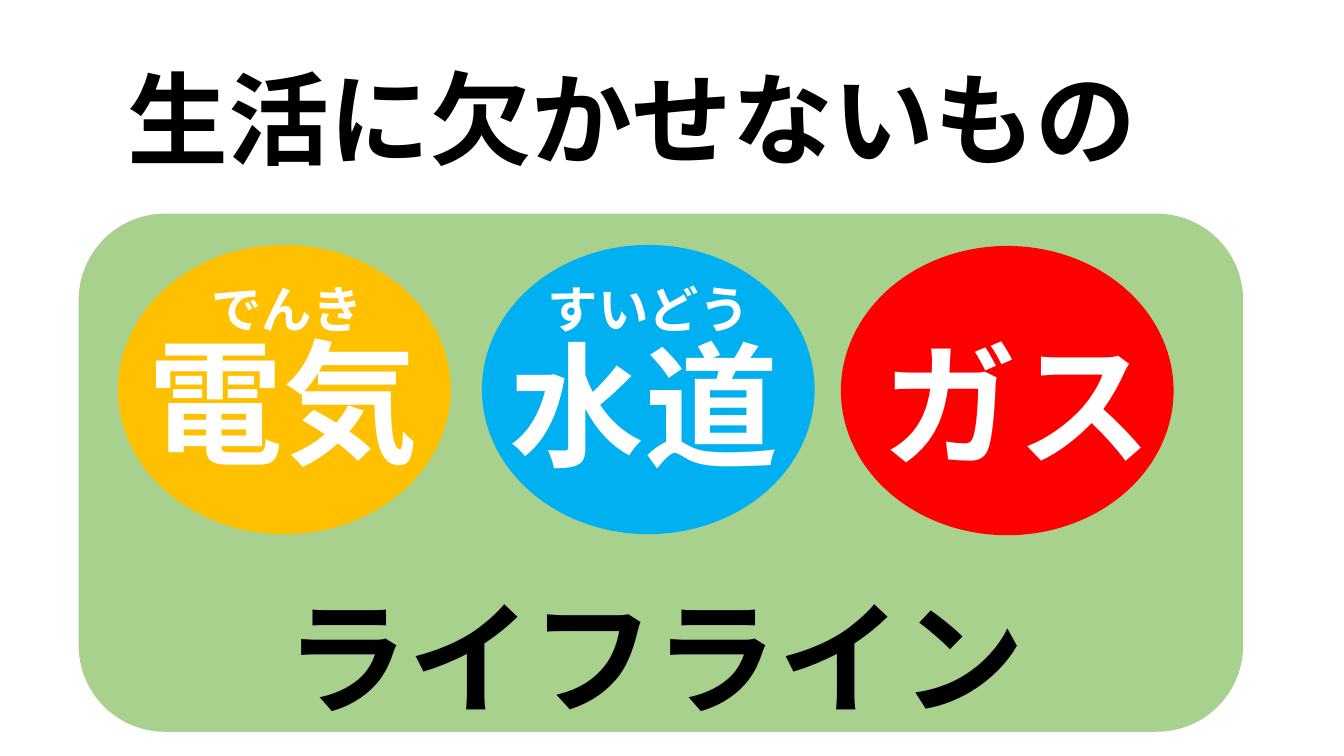
from lxml.etree import SubElement
from pptx import Presentation
from pptx.dml.color import RGBColor
from pptx.enum.shapes import MSO_SHAPE
from pptx.enum.text import MSO_ANCHOR, MSO_AUTO_SIZE, PP_ALIGN
from pptx.oxml.ns import qn
from pptx.util import Inches, Pt

FONT = "Noto Sans CJK JP"
BLACK = RGBColor(0x00, 0x00, 0x00)
WHITE = RGBColor(0xFF, 0xFF, 0xFF)
GREEN = RGBColor(0xA9, 0xD1, 0x8E)
YELLOW = RGBColor(0xFF, 0xC0, 0x00)
BLUE = RGBColor(0x00, 0xB0, 0xF0)
RED = RGBColor(0xFF, 0x00, 0x00)

UTILITIES = [
    ("電気", "でんき", YELLOW, (1.17, 2.43), (1.13, 3.3), 1.39),
    ("水道", "すいどう", BLUE, (4.78, 2.43), (4.71, 3.33), 4.98),
    ("ガス", None, RED, (8.34, 2.44), (8.41, 3.32), None),
]


def add_filled_shape(slide, kind, left, top, width, height, color):
    shape = slide.shapes.add_shape(
        kind, Inches(left), Inches(top), Inches(width), Inches(height))
    shape.shadow.inherit = False
    shape.fill.solid()
    shape.fill.fore_color.rgb = color
    shape.line.fill.background()


def add_label(slide, text, left, top, width, height, size, color,
              align=PP_ALIGN.CENTER, anchor=MSO_ANCHOR.TOP):
    box = slide.shapes.add_textbox(
        Inches(left), Inches(top), Inches(width), Inches(height))
    frame = box.text_frame
    frame.word_wrap = True
    frame.auto_size = MSO_AUTO_SIZE.SHAPE_TO_FIT_TEXT
    frame.vertical_anchor = anchor
    paragraph = frame.paragraphs[0]
    paragraph.alignment = align
    paragraph.line_spacing = 0.9
    run = paragraph.add_run()
    run.text = text
    run.font.size = Pt(size)
    run.font.bold = True
    run.font.color.rgb = color
    run.font.name = FONT
    SubElement(run.font._element, qn("a:ea")).set("typeface", FONT)


def add_utility(slide, name, reading, color, circle, label, reading_left):
    add_filled_shape(slide, MSO_SHAPE.OVAL, *circle, 3.3, 2.87, color)
    add_label(slide, name, *label, 3.36, 1.72, 96, WHITE)
    if reading:
        add_label(slide, reading, reading_left, 2.74, 2.91, 0.71, 36, WHITE,
                  anchor=MSO_ANCHOR.MIDDLE)


def main():
    presentation = Presentation()
    presentation.slide_width = Inches(13.33)
    presentation.slide_height = Inches(7.5)
    slide = presentation.slides.add_slide(presentation.slide_layouts[6])

    add_filled_shape(slide, MSO_SHAPE.ROUNDED_RECTANGLE,
                     0.78, 2.12, 11.55, 5.14, GREEN)
    add_label(slide, "生活に欠かせないもの", 1.17, 0.65, 10.57, 1.31, 72, BLACK,
              align=PP_ALIGN.LEFT)
    for utility in UTILITIES:
        add_utility(slide, *utility)
    add_label(slide, "ライフライン", 1.21, 5.88, 10.57, 1.58, 88, BLACK)

    presentation.save("out.pptx")


if __name__ == "__main__":
    main()
